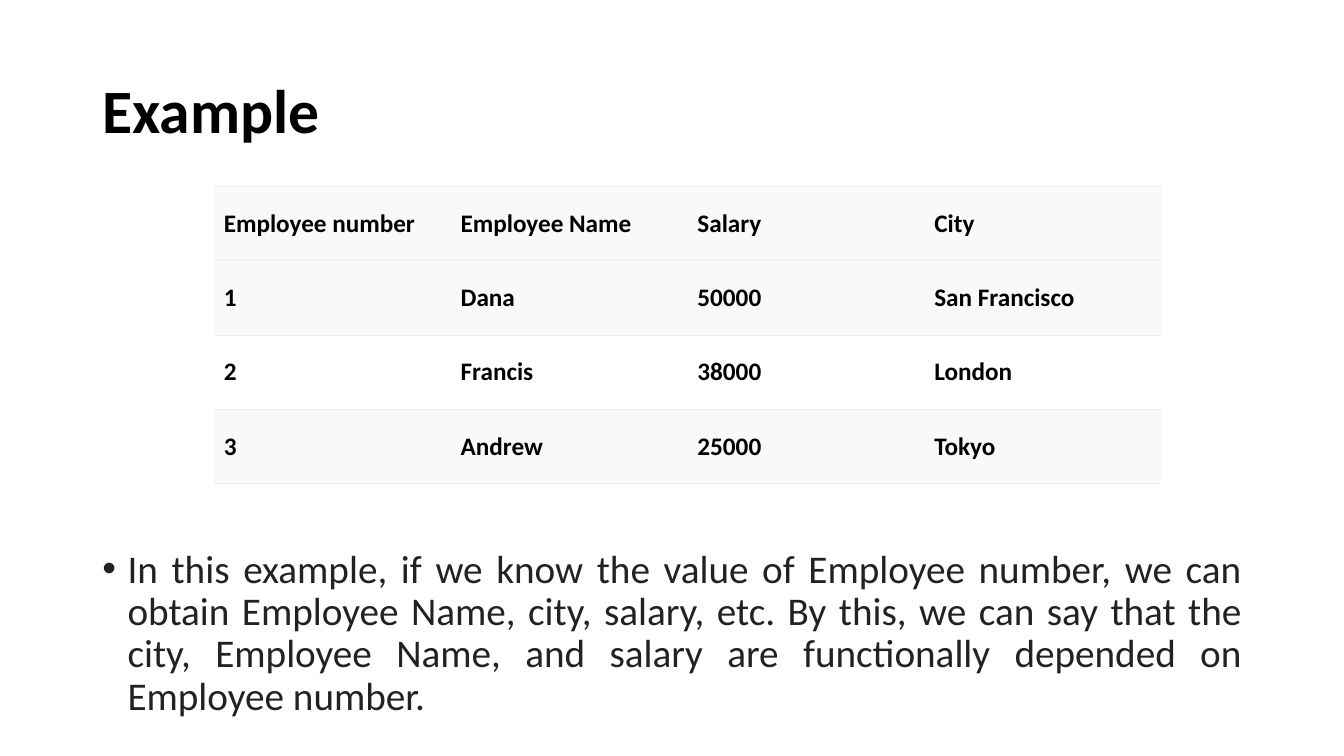
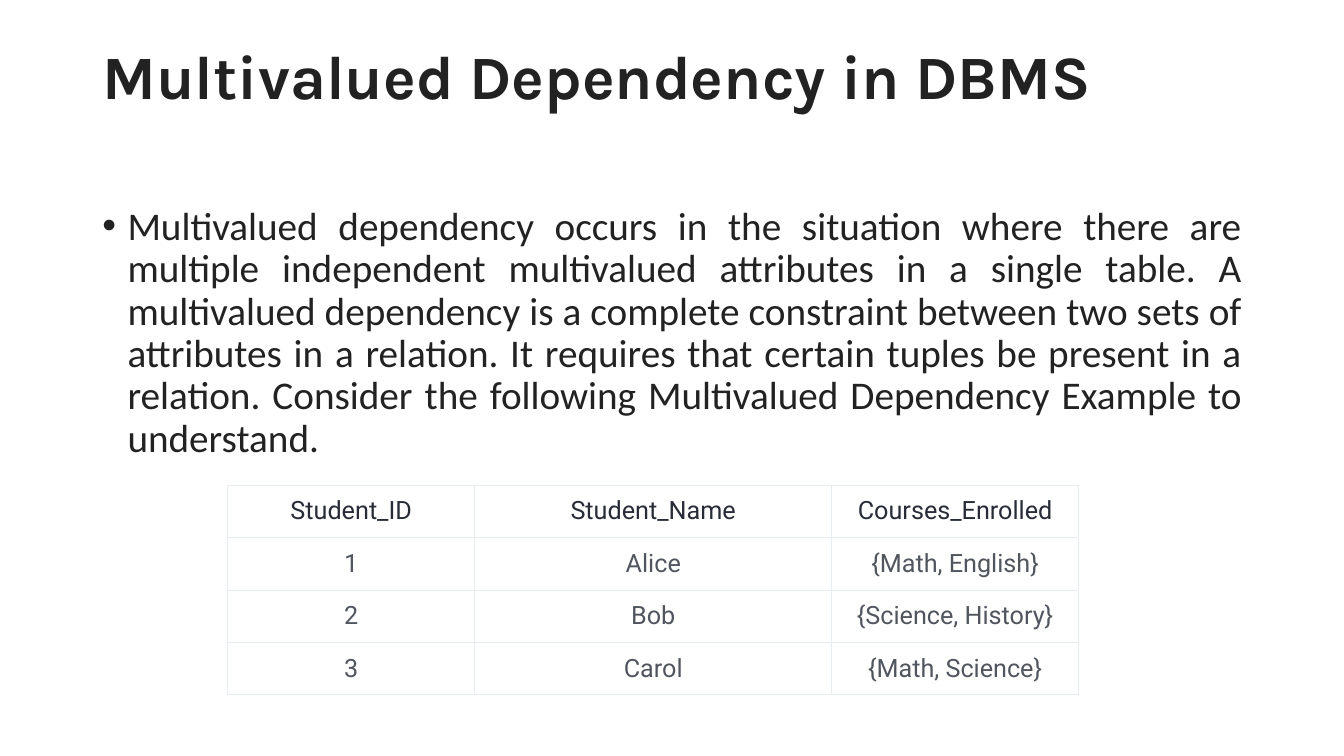
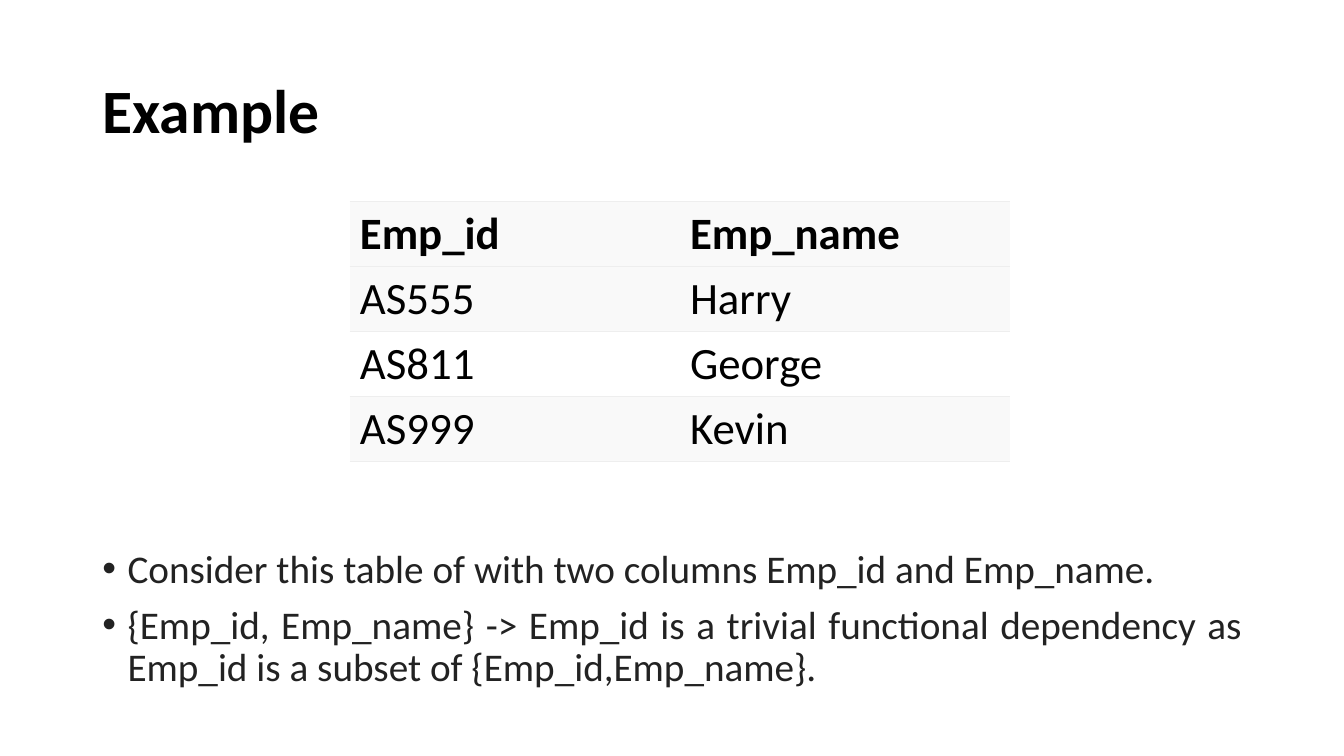
from lxml.etree import SubElement
from pptx import Presentation
from pptx.dml.color import RGBColor
from pptx.enum.text import MSO_ANCHOR, MSO_AUTO_SIZE, PP_ALIGN
from pptx.oxml.ns import qn
from pptx.util import Inches, Pt

COLS, ROWS = 160, 90
MARGIN, CONTENT = 11, 138
BLACK, INK, WHITE = "000000", "222222", "FFFFFF"
BAND, RULE = "F9F9F9", "EEEEEE"
SLATE, GREY, GRID = "272C37", "51565E", "E6ECEF"


def rgb(value):
    return RGBColor.from_string(value)


class Deck:
    """Holds the shared style and the current slide, and draws each kind of element."""

    font = "Calibri"
    title_size = 44
    body_size = 28
    line_spacing = 0.9

    def __init__(self):
        self.prs = Presentation()
        self.prs.slide_width, self.prs.slide_height = Inches(13.33), Inches(7.5)
        self.s = None

    def x(self, cols):
        return round(self.prs.slide_width * cols / COLS)

    def y(self, rows):
        return round(self.prs.slide_height * rows / ROWS)

    def style(self, p, size, color, bold=False, font=None, align=PP_ALIGN.LEFT):
        p.alignment = align
        for r in p.runs:
            r.font.name = font or self.font
            r.font.size = Pt(size)
            r.font.bold = bold
            r.font.color.rgb = rgb(color)

    def slide(self, title, top=4.8, height=17.4, color=BLACK, font=None):
        self.s = self.prs.slides.add_slide(self.prs.slide_layouts[5])
        sp = self.s.shapes.title
        sp.left, sp.top = self.x(MARGIN), self.y(top)
        sp.width, sp.height = self.x(CONTENT), self.y(height)
        tf = sp.text_frame
        tf.text = title
        tf.auto_size = MSO_AUTO_SIZE.NONE
        tf.vertical_anchor = MSO_ANCHOR.MIDDLE
        p = tf.paragraphs[0]
        p.line_spacing = self.line_spacing
        self.style(p, self.title_size, color, True, font)

    def bullets(self, top, height, items):
        sp = self.s.shapes.add_textbox(
            self.x(MARGIN), self.y(top), self.x(CONTENT), self.y(height))
        tf = sp.text_frame
        tf.word_wrap = True
        tf.text = "\n".join(items)
        for i, p in enumerate(tf.paragraphs):
            p.line_spacing = self.line_spacing
            p.space_before = Pt(10 if i else 0)
            self.style(p, self.body_size, INK, align=PP_ALIGN.JUSTIFY)
            pPr = p._p.get_or_add_pPr()
            pPr.set("marL", str(Inches(0.25)))
            pPr.set("indent", str(-Inches(0.25)))
            SubElement(pPr, qn("a:buFont"), typeface="Arial")
            SubElement(pPr, qn("a:buChar"), char="•")

    def borders(self, cell, color, sides):
        tcPr = cell._tc.get_or_add_tcPr()
        for side in "LRTB":
            ln = SubElement(tcPr, qn("a:ln" + side), w=str(Pt(0.5)))
            if side in sides:
                fill = SubElement(ln, qn("a:solidFill"))
                SubElement(fill, qn("a:srgbClr"), val=color)
            else:
                SubElement(ln, qn("a:noFill"))

    def table(self, left, top, widths, row_height, data, size=18, font=None,
              head=BLACK, body=BLACK, bold_body=False, bold_head=True,
              band=BAND, line=RULE, sides="TB", align=PP_ALIGN.LEFT, inset=None):
        table = self.s.shapes.add_table(
            len(data), len(widths), self.x(left), self.y(top),
            self.x(sum(widths)), self.y(row_height * len(data))).table
        table.first_row = table.horz_banding = False
        for col, width in zip(table.columns, widths):
            col.width = self.x(width)
        for i, (row, values) in enumerate(zip(table.rows, data)):
            row.height = self.y(row_height)
            for cell, value in zip(row.cells, values):
                cell.text = value
                cell.vertical_anchor = MSO_ANCHOR.MIDDLE
                if inset:
                    cell.margin_left = cell.margin_right = Inches(inset[0])
                    cell.margin_top = cell.margin_bottom = Inches(inset[1])
                self.borders(cell, line, sides)
                cell.fill.solid()
                cell.fill.fore_color.rgb = rgb(band if i == 0 or i % 2 else WHITE)
                self.style(cell.text_frame.paragraphs[0], size, body if i else head,
                           bold_body if i else bold_head, font, align)


def main():
    deck = Deck()

    deck.slide("Example")
    deck.table(25.44, 22.2, [28.2] * 4, 8.85, [
        ("Employee number", "Employee Name", "Salary", "City"),
        ("1", "Dana", "50000", "San Francisco"),
        ("2", "Francis", "38000", "London"),
        ("3", "Andrew", "25000", "Tokyo"),
    ], bold_body=True)
    deck.bullets(64.8, 25.2, [
        "In this example, if we know the value of Employee number, we can obtain "
        "Employee Name, city, salary, etc. By this, we can say that the city, "
        "Employee Name, and salary are functionally depended on Employee number.",
    ])

    deck.slide("Multivalued Dependency in DBMS", height=9.4, color=INK, font="Karla")
    deck.bullets(24, 33, [
        "Multivalued dependency occurs in the situation where there are multiple "
        "independent multivalued attributes in a single table. A multivalued "
        "dependency is a complete constraint between two sets of attributes in a "
        "relation. It requires that certain tuples be present in a relation. "
        "Consider the following Multivalued Dependency Example to understand.",
    ])
    deck.table(27.12, 57.75, [29.4, 42.5, 29.4], 6.2, [
        ("Student_ID", "Student_Name", "Courses_Enrolled"),
        ("1", "Alice", "{Math, English}"),
        ("2", "Bob", "{Science, History}"),
        ("3", "Carol", "{Math, Science}"),
    ], font="Roboto", head=SLATE, body=GREY, bold_head=False, band=WHITE,
        line=GRID, sides="LRTB", align=PP_ALIGN.CENTER, inset=(0.08, 0.11))

    deck.slide("Example")
    deck.table(41.65, 24, [39.3] * 2, 7.74, [
        ("Emp_id", "Emp_name"),
        ("AS555", "Harry"),
        ("AS811", "George"),
        ("AS999", "Kevin"),
    ], size=32)
    deck.bullets(64.8, 25.2, [
        "Consider this table of with two columns Emp_id and Emp_name.",
        "{Emp_id, Emp_name} -> Emp_id is a trivial functional dependency as "
        "Emp_id is a subset of {Emp_id,Emp_name}.",
    ])

    deck.prs.save("out.pptx")


if __name__ == "__main__":
    main()
